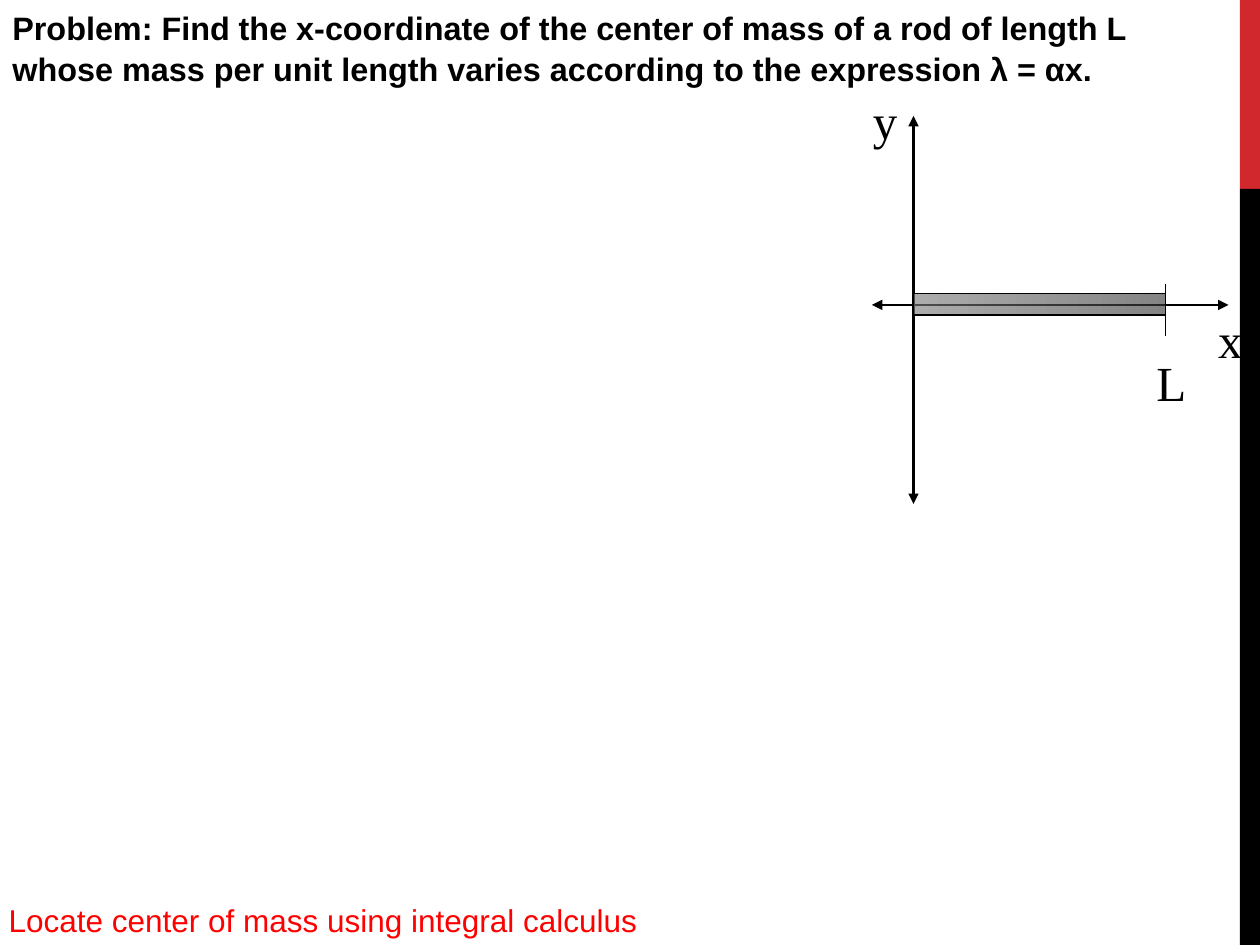
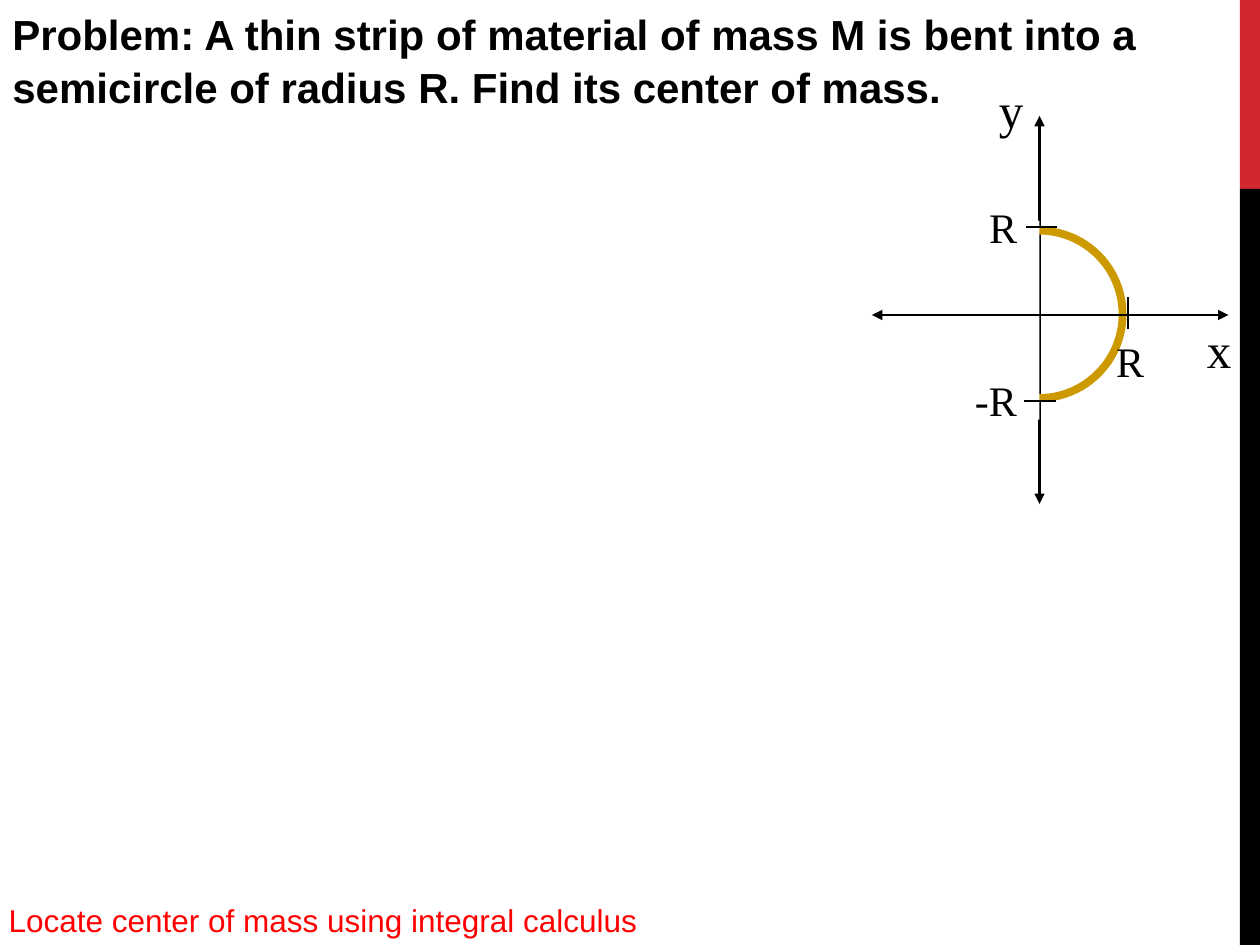
from collections import namedtuple

from lxml import etree
from pptx import Presentation
from pptx.dml.color import RGBColor
from pptx.enum.shapes import MSO_CONNECTOR as Connector, MSO_SHAPE as Shape
from pptx.enum.text import MSO_AUTO_SIZE as AutoSize, PP_ALIGN as Align
from pptx.oxml.ns import qn
from pptx.util import Inches, Pt

Box = namedtuple("Box", "left top width height")

BLACK, WHITE, RED, BAND_RED, GOLD = "000000", "FFFFFF", "FF0000", "D1282E", "CC9900"
SANS, SERIF = "Arial", "Times New Roman"
BAND = Box(9.84, 0, 0.16, 7.5)
FOOTER = Box(-0.03, 7.1, 6.83, 0.4)
DIAGRAM = Box(6.92, 0.92, 2.83, 3.08)
BAND_SPLIT = 1.5
FOOTER_TEXT = "Locate center of mass using integral calculus"


def color(value):
    return RGBColor.from_string(value)


def inside(frame, left, top, width, height):
    return Box(frame.left + left, frame.top + top, width, height)


def add_figure(shapes, kind, box, fill=None, line=None, weight=1):
    figure = shapes.add_shape(kind, *map(Inches, box))
    figure.shadow.inherit = False
    if fill:
        figure.fill.solid()
        figure.fill.fore_color.rgb = color(fill)
    else:
        figure.fill.background()
    if line:
        figure.line.color.rgb = color(line)
        figure.line.width = Pt(weight)
    else:
        figure.line.fill.background()
    return figure


def add_line(shapes, frame, start, end, weight=1, arrows=False):
    points = [Inches(value) for x, y in (start, end)
              for value in (frame.left + x, frame.top + y)]
    line = shapes.add_connector(Connector.STRAIGHT, *points)
    line.line.color.rgb = color(BLACK)
    line.line.width = Pt(weight)
    properties = line._element.spPr
    if arrows:
        outline = properties.find(qn("a:ln"))
        for end_tag in ("a:headEnd", "a:tailEnd"):
            etree.SubElement(outline, qn(end_tag), type="triangle")
    etree.SubElement(properties, qn("a:effectLst"))


def add_text(shapes, box, text, size, font=SERIF, ink=BLACK, bold=False,
             wrap=False, align=Align.LEFT, grow=True):
    holder = shapes.add_textbox(*map(Inches, box))
    frame = holder.text_frame
    frame.word_wrap = wrap
    frame.auto_size = AutoSize.SHAPE_TO_FIT_TEXT if grow else AutoSize.NONE
    para = frame.paragraphs[0]
    para.text = text
    para.alignment = align
    para.font.name = font
    para.font.size = Pt(size)
    para.font.bold = bold
    para.font.color.rgb = color(ink)
    return para


def add_band(page, box):
    lower = inside(box, 0, BAND_SPLIT, box.width, box.height - BAND_SPLIT)
    add_figure(page.shapes, Shape.RECTANGLE, box._replace(height=BAND_SPLIT), BAND_RED)
    add_figure(page.shapes, Shape.RECTANGLE, lower, BLACK)


def add_problem(page, box, text, size):
    para = add_text(page.shapes, box, text, size, SANS, bold=True, wrap=True, grow=False)
    para.line_spacing = 1.05


def add_x_axis(shapes, frame, y):
    add_line(shapes, frame, (0, y), (frame.width, y), arrows=True)


def add_y_axis(shapes, frame, x):
    add_line(shapes, frame, (x, 0), (x, frame.height), 1.5, arrows=True)


def add_axis_label(shapes, frame, text, left, top, width=0.4):
    add_text(shapes, inside(frame, left, top, width, 0.57), text, 28)


def shade_rod(rod):
    rod.fill.gradient()
    rod.fill.gradient_angle = 0
    for stop, shade, position in zip(rod.fill.gradient_stops, ("7A7A7A", "3A3A3A"), (0, 1)):
        stop.color.rgb = color(shade)
        stop.position = position
    for tone in rod._element.spPr.find(qn("a:gradFill")).iter(qn("a:srgbClr")):
        etree.SubElement(tone, qn("a:alpha"), val="62000")


def draw_rod(page, frame):
    shapes = page.shapes.add_group_shape().shapes
    origin, middle, length = 0.33, 1.5, 2
    rod_end = origin + length
    add_y_axis(shapes, frame, origin)
    add_x_axis(shapes, frame, middle)
    rod_box = inside(frame, origin, middle - 0.09, length, 0.17)
    shade_rod(add_figure(shapes, Shape.RECTANGLE, rod_box, line=BLACK))
    add_line(shapes, frame, (rod_end, middle - 0.17), (rod_end, middle + 0.25))
    add_axis_label(shapes, frame, "L", 2.16, 1.83, 0.44)
    add_axis_label(shapes, frame, "x", 2.65, 1.49)
    add_axis_label(shapes, frame, "y", -0.09, -0.25)


def draw_semicircle(page, frame):
    shapes = page.shapes.add_group_shape().shapes
    origin, middle, diameter = 1.33, 1.58, 1.33
    add_y_axis(shapes, frame, origin)
    ring = inside(frame, 0.66, 0.91, diameter, diameter)
    add_figure(shapes, Shape.OVAL, ring, line=GOLD, weight=4.5)
    add_figure(shapes, Shape.RECTANGLE, inside(frame, 0.58, 0.83, 0.75, 1.58), WHITE)
    add_x_axis(shapes, frame, middle)
    add_axis_label(shapes, frame, "x", 2.56, 1.57)
    add_axis_label(shapes, frame, "y", 0.91, -0.34)
    radius_marks = [
        ("R", (2.03, 1.44), (2.03, 1.69), (1.84, 1.69, 0.42)),
        ("R", (1.47, 0.88), (1.22, 0.88), (0.83, 0.63, 0.42)),
        ("-R", (1.46, 2.26), (1.21, 2.26), (0.72, 2, 0.53)),
    ]
    for text, start, end, place in radius_marks:
        add_line(shapes, frame, start, end)
        add_text(shapes, inside(frame, *place, 0.5), text, 24, align=Align.RIGHT)


def add_page(deck, problem, size, height, draw):
    page = deck.slides.add_slide(deck.slide_layouts[6])
    add_band(page, BAND)
    add_problem(page, Box(0, 0, 9.67, height), problem, size)
    draw(page, DIAGRAM)
    add_text(page.shapes, FOOTER, FOOTER_TEXT, 18, SANS, RED, wrap=True)


def main():
    deck = Presentation()
    deck.slide_width, deck.slide_height = Inches(10), Inches(7.5)
    add_page(deck, "Problem: Find the x-coordinate of the center of mass of a rod of length L "
             "whose mass per unit length varies according to the expression λ = αx.",
             18.5, 0.92, draw_rod)
    add_page(deck, "Problem: A thin strip of material of mass M is bent into a semicircle "
             "of radius R. Find its center of mass.", 24, 1.17, draw_semicircle)
    deck.save("out.pptx")


if __name__ == "__main__":
    main()
